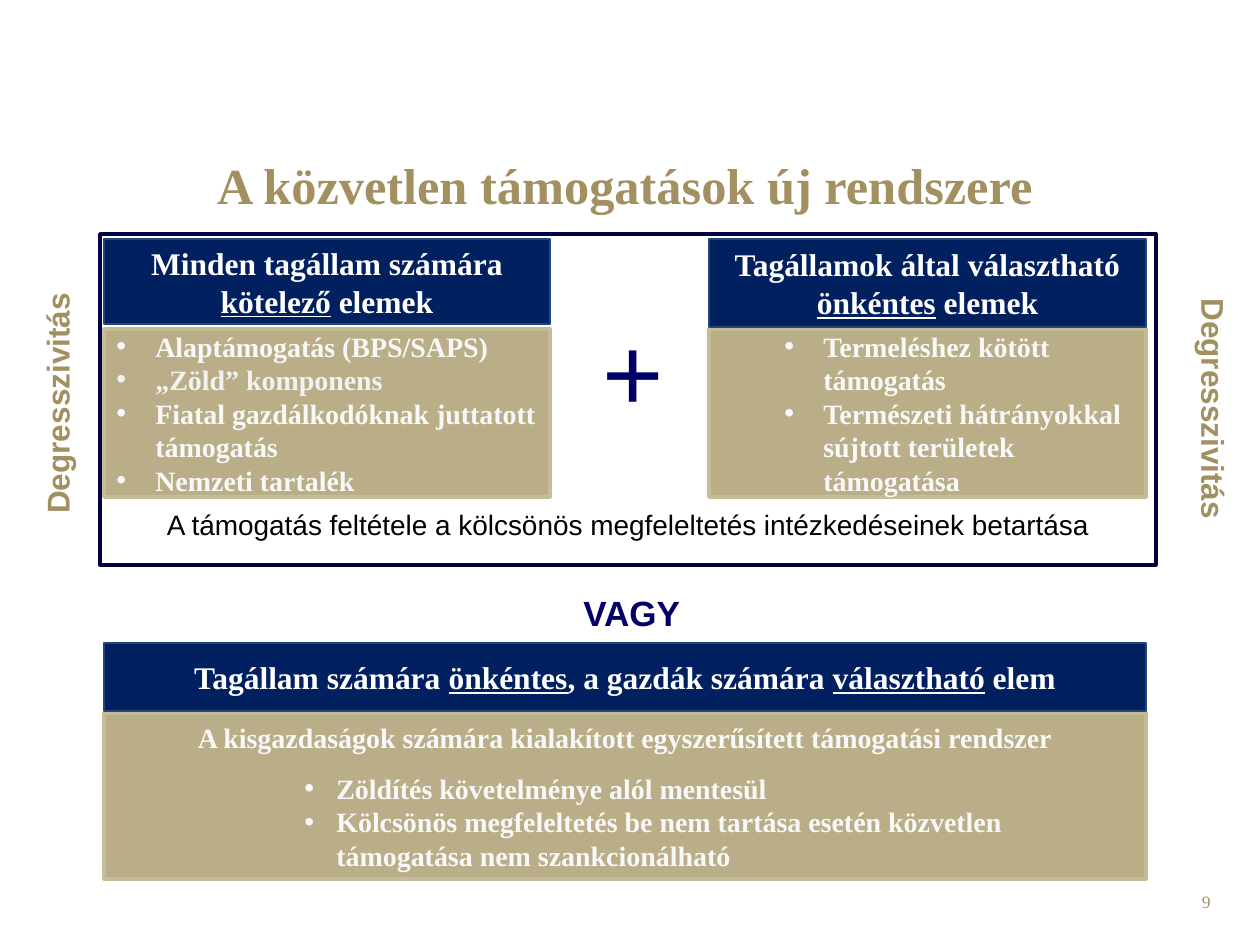
from pptx import Presentation
from pptx.dml.color import RGBColor
from pptx.enum.shapes import MSO_SHAPE
from pptx.enum.text import MSO_ANCHOR as ANCHOR, PP_ALIGN as ALIGN
from pptx.oxml.ns import qn
from pptx.util import Pt
from lxml.etree import SubElement

PX = 914400 // 126
SERIF, SANS = "Times New Roman", "Arial"
NAVY, NAVY_EDGE, SAND, SAND_EDGE = "002060", "1F497D", "BAAE88", "C4BD97"
GOLD, BLUE, PALE, PALER = "A29061", "000066", "F8F8F8", "F2F2F2"

TITLE = "A közvetlen támogatások új rendszere"
CONDITION = "A támogatás feltétele a kölcsönös megfeleltetés intézkedéseinek betartása"
SIDE_LABEL = "Degresszivitás"
PAGE_NUMBER = "9"

# Underscores enclose underlined words; indent is (text margin, hanging part).
PANELS = [
    dict(left=104, width=446, top=239, header_height=85,
         body_top=329, body_height=168, indent=(39, 39), intro=None,
         header="Minden tagállam számára _kötelező_ elemek",
         bullets=[("Alaptámogatás (BPS/SAPS)", PALE),
                  ("„Zöld” komponens", PALER),
                  ("Fiatal gazdálkodóknak juttatott támogatás", PALE),
                  ("Nemzeti tartalék", PALE)]),
    dict(left=709, width=437, top=239, header_height=88,
         body_top=329, body_height=168, indent=(102, 39), intro=None,
         header="Tagállamok által választható _önkéntes_ elemek",
         bullets=[("Termeléshez kötött támogatás", PALE),
                  ("Természeti hátrányokkal sújtott területek támogatása", PALE)]),
    dict(left=104, width=1042, top=643, header_height=68,
         body_top=713, body_height=166, indent=(220, 32),
         intro="A kisgazdaságok számára kialakított egyszerűsített támogatási rendszer",
         header="Tagállam számára _önkéntes_, a gazdák számára _választható_ elem",
         bullets=[("Zöldítés követelménye alól mentesül", PALE),
                  ("Kölcsönös megfeleltetés be nem tartása esetén közvetlen "
                   "támogatása nem szankcionálható", PALE)]),
]

deck = Presentation()
deck.slide_width, deck.slide_height = 1260 * PX, 945 * PX
slide = deck.slides.add_slide(deck.slide_layouts[6])


def rgb(color):
    return RGBColor.from_string(color)


def add_box(at, edge, edge_width, fill=None, anchor=ANCHOR.MIDDLE):
    box = slide.shapes.add_shape(MSO_SHAPE.RECTANGLE, *(v * PX for v in at))
    box.shadow.inherit = False
    if fill:
        box.fill.solid()
        box.fill.fore_color.rgb = rgb(fill)
    else:
        box.fill.background()
    box.line.color.rgb = rgb(edge)
    box.line.width = Pt(edge_width)
    box.text_frame.word_wrap = True
    box.text_frame.vertical_anchor = anchor
    return box


def write(paragraph, text, size, font, color, bold=True, align=ALIGN.LEFT):
    paragraph.alignment = align
    for i, part in enumerate(text.split("_")):
        run = paragraph.add_run()
        run.text = part
        if i % 2:
            run.font.underline = True
    style = paragraph.font
    style.size, style.name, style.bold = Pt(size), font, bold
    style.color.rgb = rgb(color)


def add_bullet(paragraph, margin, hang):
    props = paragraph._p.get_or_add_pPr()
    props.set("marL", str(margin * PX))
    props.set("indent", str(-hang * PX))
    SubElement(props, qn("a:buFont"), typeface=SANS)
    SubElement(props, qn("a:buChar"), char="•")


def add_label(at, *style, anchor=ANCHOR.TOP, **options):
    label = slide.shapes.add_textbox(*(v * PX for v in at))
    label.text_frame.word_wrap = True
    label.text_frame.vertical_anchor = anchor
    write(label.text_frame.paragraphs[0], *style, **options)
    return label


def add_panel(panel):
    left, width = panel["left"], panel["width"]
    body = add_box((left, panel["body_top"], width, panel["body_height"]),
                   SAND_EDGE, 2, SAND).text_frame
    paragraph = body.paragraphs[0]
    if panel["intro"]:
        paragraph.space_after = Pt(10)
        write(paragraph, panel["intro"], 16, SERIF, PALE, align=ALIGN.CENTER)
        paragraph = body.add_paragraph()
    for i, (text, color) in enumerate(panel["bullets"]):
        if i:
            paragraph = body.add_paragraph()
        add_bullet(paragraph, *panel["indent"])
        write(paragraph, text, 16, SERIF, color)
    header = add_box((left, panel["top"], width, panel["header_height"]),
                     NAVY_EDGE, 1, NAVY)
    write(header.text_frame.paragraphs[0], panel["header"], 18, SERIF, "FFFFFF",
          align=ALIGN.CENTER)


frame = add_box((100, 234, 1056, 331), "000042", 2, anchor=ANCHOR.BOTTOM)
frame.text_frame.margin_bottom = 24 * PX
write(frame.text_frame.paragraphs[0], CONDITION, 16, SANS, "000000",
      bold=False, align=ALIGN.CENTER)

add_label((58, 145, 1134, 79), TITLE, 28.8, SERIF, GOLD,
          anchor=ANCHOR.MIDDLE, align=ALIGN.CENTER)
for panel in PANELS:
    add_panel(panel)
add_label((571, 585, 159, 54), "VAGY", 20, SANS, BLUE)
add_label((590, 300, 120, 139), "+", 60, SANS, BLUE, bold=False)

for left, top, rotation in [(32, 234, 0), (1176, 239, 180)]:
    side = add_label((left, top, 63, 339), SIDE_LABEL, 18, SANS, GOLD,
                     align=ALIGN.CENTER)
    side.text_frame._txBody.bodyPr.set("vert", "vert270")
    side.rotation = rotation

add_label((929, 885, 294, 50), PAGE_NUMBER, 10, SERIF, "A69765",
          bold=False, align=ALIGN.RIGHT)

deck.save("out.pptx")
